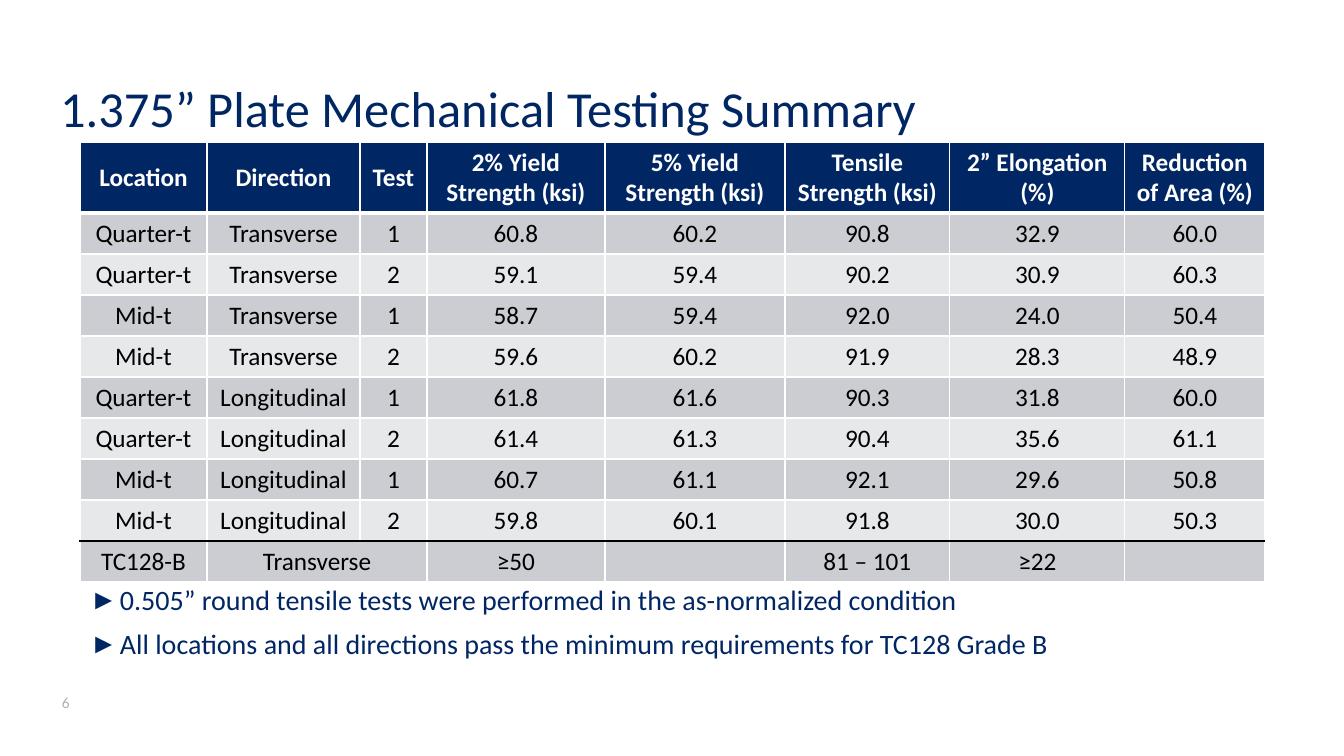
from lxml import etree
from pptx import Presentation
from pptx import util as u
from pptx.dml.color import RGBColor
from pptx.enum import text
from pptx.oxml import ns

NAVY, WHITE, BLACK, GREY = "002664", "FFFFFF", "000000", "B0B1AB"
BANDS = ["E7E8EA", "CCCDD3"]


def px(*lengths):
    return [u.Emu(round(length * 914400 / 100.8)) for length in lengths]


def style(font, size, color, bold=False):
    font.name = "Calibri"
    font.size = u.Pt(size)
    font.bold = bold
    font.color.rgb = RGBColor.from_string(color)


deck = Presentation()
deck.slide_width, deck.slide_height = px(1344, 756)
page = deck.slides.add_slide(deck.slide_layouts[5])

title = page.shapes.title
title.left, title.top, title.width, title.height = px(50, 35, 1226, 107)
title.text_frame.text = "1.375” Plate Mechanical Testing Summary"
title.text_frame.auto_size = text.MSO_AUTO_SIZE.NONE
title.text_frame.vertical_anchor = text.MSO_ANCHOR.BOTTOM
para = title.text_frame.paragraphs[0]
para.alignment = text.PP_ALIGN.LEFT
para.line_spacing = 0.8
style(para.runs[0].font, 36, NAVY)

notes = [
    "0.505” round tensile tests were performed in the as-normalized condition",
    "All locations and all directions pass the minimum requirements for TC128 Grade B",
]
box = page.shapes.add_textbox(*px(80, 581, 1179, 86))
box.text_frame.word_wrap = True
box.text_frame.text = "\n".join(notes)
for index, para in enumerate(box.text_frame.paragraphs):
    para.line_spacing = 0.9
    if index:
        para.space_before = u.Pt(10)
    props = para._p.get_or_add_pPr()
    indent = px(30)[0]
    props.set("marL", str(indent))
    props.set("indent", str(-indent))
    bullet_color = etree.SubElement(props, ns.qn("a:buClr"))
    etree.SubElement(bullet_color, ns.qn("a:srgbClr"), val=NAVY)
    etree.SubElement(props, ns.qn("a:buFont"), typeface="Arial")
    etree.SubElement(props, ns.qn("a:buChar"), char="►")
    style(para.runs[0].font, 20, NAVY)

number = page.shapes.add_textbox(*px(52, 687, 60, 30))
number.text_frame.word_wrap = True
number.text_frame.text = "6"
number.text_frame.vertical_anchor = text.MSO_ANCHOR.MIDDLE
style(number.text_frame.paragraphs[0].runs[0].font, 11, GREY)

rows = [
    ["Location", "Direction", "Test", "2% Yield Strength (ksi)", "5% Yield Strength (ksi)",
     "Tensile Strength (ksi)", "2” Elongation (%)", "Reduction of Area (%)"],
    ["Quarter-t", "Transverse", "1", "60.8", "60.2", "90.8", "32.9", "60.0"],
    ["Quarter-t", "Transverse", "2", "59.1", "59.4", "90.2", "30.9", "60.3"],
    ["Mid-t", "Transverse", "1", "58.7", "59.4", "92.0", "24.0", "50.4"],
    ["Mid-t", "Transverse", "2", "59.6", "60.2", "91.9", "28.3", "48.9"],
    ["Quarter-t", "Longitudinal", "1", "61.8", "61.6", "90.3", "31.8", "60.0"],
    ["Quarter-t", "Longitudinal", "2", "61.4", "61.3", "90.4", "35.6", "61.1"],
    ["Mid-t", "Longitudinal", "1", "60.7", "61.1", "92.1", "29.6", "50.8"],
    ["Mid-t", "Longitudinal", "2", "59.8", "60.1", "91.8", "30.0", "50.3"],
    ["TC128-B", "Transverse", "", "≥50", "", "81 – 101", "≥22", ""],
]
widths = [127, 153, 67, 178, 180, 165, 175, 140]
heights = [71] + [41] * 9
last = len(rows) - 1
rules = {1: (WHITE, 3), last: (BLACK, 1)}

frame = page.shapes.add_table(len(rows), len(widths), *px(80, 142, sum(widths), sum(heights)))
table = frame.table
for column, width in zip(table.columns, px(*widths)):
    column.width = width
for row, height in zip(table.rows, px(*heights)):
    row.height = height

for r, values in enumerate(rows):
    for c, value in enumerate(values):
        cell = table.cell(r, c)
        cell.vertical_anchor = text.MSO_ANCHOR.MIDDLE
        props = cell._tc.get_or_add_tcPr()
        plain = (WHITE, 1)
        edges = {"L": plain, "R": plain, "T": rules.get(r, plain), "B": rules.get(r + 1, plain)}
        for side, (color, weight) in edges.items():
            line = etree.SubElement(props, ns.qn("a:ln" + side), w=str(u.Pt(weight)))
            line_fill = etree.SubElement(line, ns.qn("a:solidFill"))
            etree.SubElement(line_fill, ns.qn("a:srgbClr"), val=color)
        cell.fill.solid()
        cell.fill.fore_color.rgb = RGBColor.from_string(BANDS[r % 2] if r else NAVY)
        para = cell.text_frame.paragraphs[0]
        para.text = value
        para.alignment = text.PP_ALIGN.CENTER
        style(para.font, 18, BLACK if r else WHITE, r == 0)
        for span in para.runs:
            style(span.font, 18, BLACK if r else WHITE, r == 0)
table.cell(last, 1).merge(table.cell(last, 2))

deck.save("out.pptx")
